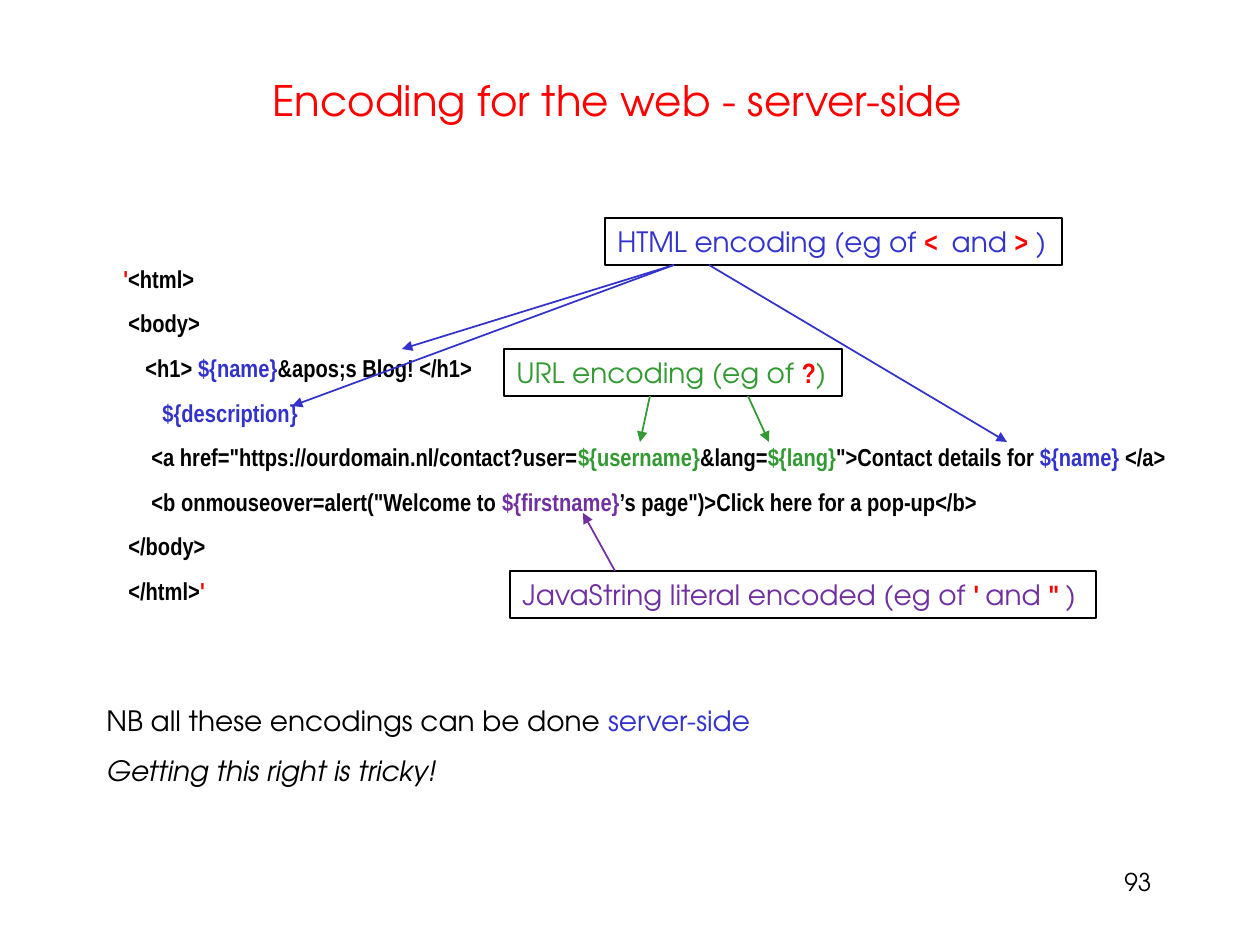
from lxml.etree import SubElement
from pptx import Presentation
from pptx.dml.color import RGBColor
from pptx.enum.shapes import MSO_CONNECTOR, MSO_SHAPE
from pptx.enum.text import MSO_ANCHOR, PP_ALIGN
from pptx.oxml.ns import qn
from pptx.util import Pt

PX = 914400 // 126
SANS, NARROW = "TeX Gyre Adventor", "Arial Narrow"
BLACK, RED, BLUE, GREEN, PURPLE = "000000", "FF0000", "3333CC", "339933", "7030A0"

TITLE = "Encoding for the web - server-side"
PAGE_NUMBER = "93"
CODE = [
    (17, [("'", RED), ("<html>", BLACK)]),
    (22, [("<body>", BLACK)]),
    (39, [("<h1> ", BLACK), ("${name}", BLUE), ("&apos;s Blog! </h1>", BLACK)]),
    (56, [("${description}", BLUE)]),
    (45, [('<a href="https://ourdomain.nl/contact?user=', BLACK), ("${username}", GREEN),
          ("&lang=", BLACK), ("${lang}", GREEN), ('">Contact details for ', BLACK),
          ("${name} ", BLUE), ("</a>", BLACK)]),
    (45, [('<b onmouseover=alert("Welcome to ', BLACK), ("${firstname}", PURPLE),
          ('’s page")>Click here for a pop-up</b>', BLACK)]),
    (22, [("</body>", BLACK)]),
    (22, [("</html>", BLACK), ("'", RED)]),
]
NOTES = [
    (53, False, [("NB all these encodings can be done ", BLACK), ("server-side", BLUE)]),
    (6, True, [("Getting this right is tricky!", BLACK)]),
]
CALLOUTS = [
    ((605, 218, 457, 47), [("HTML encoding (eg of ", BLUE), ("< ", RED), (" and ", BLUE),
                           (">", RED), (" )", BLUE)]),
    ((510, 571, 586, 47), [("JavaString literal encoded (eg of ", PURPLE), ("' ", RED),
                           ("and ", PURPLE), ('" ', RED), (")", PURPLE)]),
    ((504, 349, 338, 47), [("URL encoding (eg of ", GREEN), ("?", RED), (")", GREEN)]),
]
ARROWS = [
    (BLUE, (674, 265), (402, 349)),
    (BLUE, (674, 265), (292, 406)),
    (BLUE, (709, 265), (1007, 442)),
    (GREEN, (650, 396), (640, 442)),
    (GREEN, (748, 396), (769, 442)),
    (PURPLE, (615, 571), (583, 513)),
]


def px(*lengths):
    return [length * PX for length in lengths]


def color(value):
    return RGBColor.from_string(value)


def style(font, size, name=SANS, bold=False, italic=False):
    font.size, font.name, font.bold, font.italic = Pt(size), name, bold, italic


def add_runs(paragraph, runs):
    for text, tint in runs:
        run = paragraph.add_run()
        run.text = text
        run.font.color.rgb = color(tint)


def add_text_box(slide, box):
    frame = slide.shapes.add_textbox(*px(*box)).text_frame
    frame.word_wrap = True
    return frame


def add_label(slide, box, text, size, tint, align):
    frame = add_text_box(slide, box)
    paragraph = frame.paragraphs[0]
    paragraph.alignment = align
    style(paragraph.font, size)
    add_runs(paragraph, [(text, tint)])
    return frame


def add_body(slide, box):
    frame = add_text_box(slide, box)
    lines = [(indent, 6, (14, NARROW, True), runs) for indent, runs in CODE]
    lines += [(0, gap, (16, SANS, False, italic), runs) for gap, italic, runs in NOTES]
    for index, (indent, gap, font, runs) in enumerate(lines):
        paragraph = frame.add_paragraph() if index else frame.paragraphs[0]
        paragraph.line_spacing = 1.16
        paragraph.space_before = Pt(gap if index else 0)
        paragraph._p.get_or_add_pPr().set("marL", str(indent * PX))
        style(paragraph.font, *font)
        add_runs(paragraph, runs)


def add_callout(slide, box, runs):
    shape = slide.shapes.add_shape(MSO_SHAPE.RECTANGLE, *px(*box))
    shape.shadow.inherit = False
    shape.fill.background()
    shape.line.color.rgb = color(BLACK)
    shape.line.width = Pt(1)
    shape.text_frame.word_wrap = True
    paragraph = shape.text_frame.paragraphs[0]
    paragraph.alignment = PP_ALIGN.LEFT
    style(paragraph.font, 16)
    add_runs(paragraph, runs)
    for run in paragraph.runs:
        if run.font.color.rgb == color(RED):
            style(run.font, 16, NARROW, True)


def add_arrow(slide, tint, start, end):
    arrow = slide.shapes.add_connector(MSO_CONNECTOR.STRAIGHT, *px(*start, *end))
    arrow.line.color.rgb = color(tint)
    arrow.line.width = Pt(1)
    SubElement(arrow.line._get_or_add_ln(), qn("a:tailEnd"), type="triangle")
    SubElement(arrow._element.spPr, qn("a:effectLst"))


def main():
    """Build the slide on server-side encoding."""
    presentation = Presentation()
    presentation.slide_width, presentation.slide_height = px(1260, 945)
    slide = presentation.slides.add_slide(presentation.slide_layouts[6])
    title = add_label(slide, (82, 38, 1070, 116), TITLE, 24, RED, PP_ALIGN.CENTER)
    title.vertical_anchor = MSO_ANCHOR.MIDDLE
    title.paragraphs[0].line_spacing = 1.16
    add_label(slide, (903, 861, 261, 62), PAGE_NUMBER, 14, BLACK, PP_ALIGN.RIGHT)
    add_body(slide, (94, 253, 1091, 585))
    for box, runs in CALLOUTS:
        add_callout(slide, box, runs)
    for tint, start, end in ARROWS:
        add_arrow(slide, tint, start, end)
    presentation.save("out.pptx")


if __name__ == "__main__":
    main()
